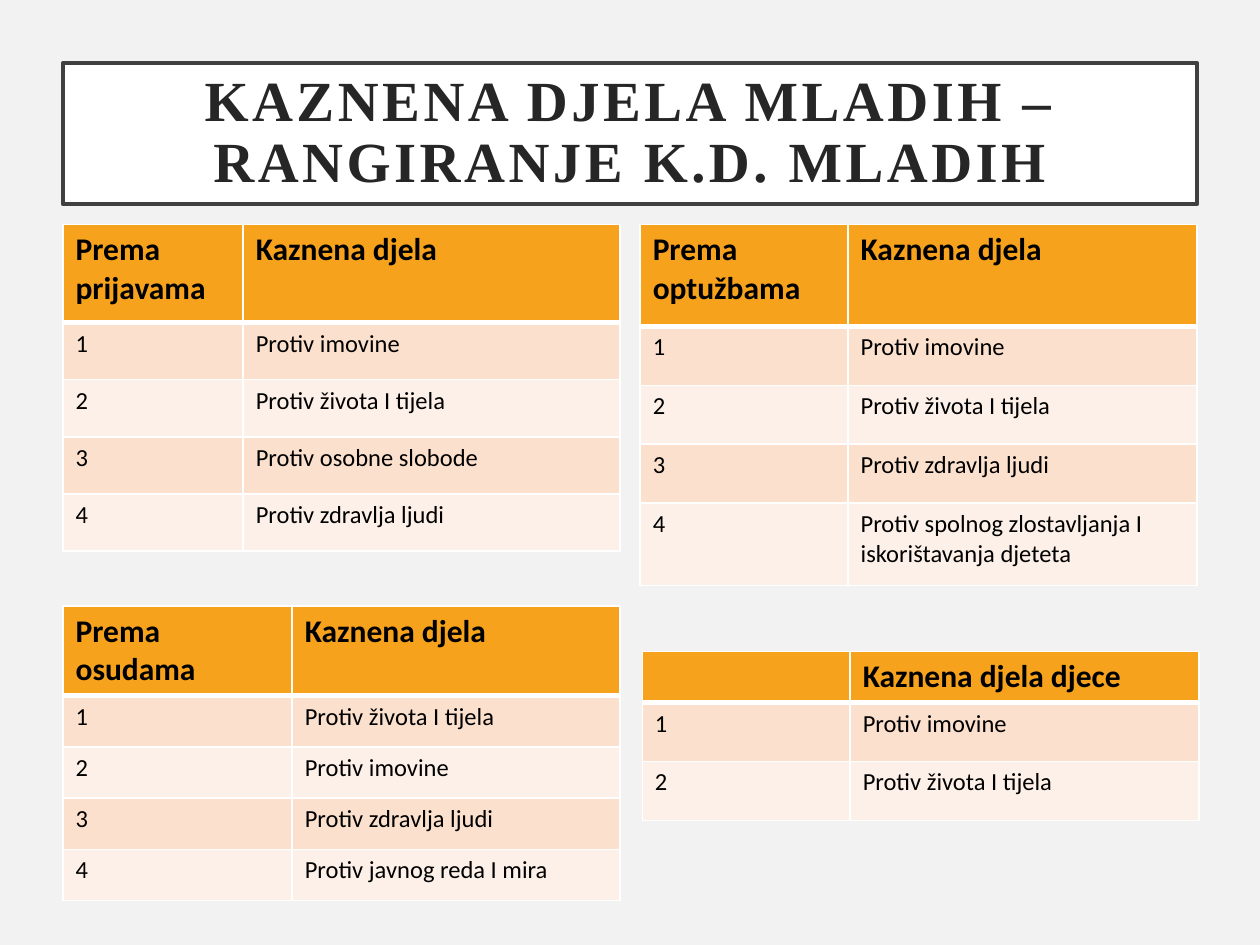
from lxml import etree
from pptx import Presentation
from pptx.dml.color import RGBColor
from pptx.enum.shapes import MSO_SHAPE
from pptx.enum.text import MSO_ANCHOR, PP_ALIGN
from pptx.oxml.ns import qn
from pptx.util import Pt

RECT = MSO_SHAPE.RECTANGLE
MIDDLE = MSO_ANCHOR.MIDDLE
CENTER = PP_ALIGN.CENTER

HEAD = "F6A21D"
BANDS = ["FBE0CD", "FDF0E8"]
WHITE = "FFFFFF"
WIDTH = 318.2

# left, top, first column width, row heights, rows of text
TABLES = [
    (36, 128.2, 103, [56.2] + [32.6] * 4, [
        ("Prema prijavama", "Kaznena djela"),
        ("1", "Protiv imovine"),
        ("2", "Protiv života I tijela"),
        ("3", "Protiv osobne slobode"),
        ("4", "Protiv zdravlja ljudi")]),
    (365.8, 128.2, 118.8, [58.3] + [33.7] * 3 + [47], [
        ("Prema optužbama", "Kaznena djela"),
        ("1", "Protiv imovine"),
        ("2", "Protiv života I tijela"),
        ("3", "Protiv zdravlja ljudi"),
        ("4", "Protiv spolnog zlostavljanja I iskorištavanja djeteta")]),
    (367, 372.2, 118.8, [28.8] + [33.7] * 2, [
        ("", "Kaznena djela djece"),
        ("1", "Protiv imovine"),
        ("2", "Protiv života I tijela")]),
    (36, 346.3, 131, [50.4] + [29.3] * 4, [
        ("Prema osudama", "Kaznena djela"),
        ("1", "Protiv života I tijela"),
        ("2", "Protiv imovine"),
        ("3", "Protiv zdravlja ljudi"),
        ("4", "Protiv javnog reda I mira")]),
]


def color(code):
    return RGBColor.from_string(code)


def paint(fill, code):
    fill.solid()
    fill.fore_color.rgb = color(code)


def style(run, name, size, code, bold):
    font = run.font
    font.name, font.size, font.bold = name, Pt(size), bold
    font.color.rgb = color(code)


def add_title(slide, text):
    box = slide.shapes.add_shape(RECT, Pt(36), Pt(36), Pt(648), Pt(80.6))
    box.shadow.inherit = False
    paint(box.fill, WHITE)
    box.line.color.rgb = color("404040")
    box.line.width = Pt(2.5)
    frame = box.text_frame
    frame.text = text
    frame.word_wrap = True
    frame.vertical_anchor = MIDDLE
    frame.margin_left = frame.margin_right = Pt(14.4)
    frame.margin_top = frame.margin_bottom = Pt(14.4)
    para = frame.paragraphs[0]
    para.alignment = CENTER
    para.line_spacing = 0.9
    run = para.runs[0]
    style(run, "Times New Roman", 32.4, "262626", True)
    run.font._element.set("spc", "200")


def add_edges(cell, top, bottom):
    # Border lines come before the fill in the cell properties
    props = cell._tc.get_or_add_tcPr()
    edges = [("a:lnL", 1), ("a:lnR", 1), ("a:lnT", top), ("a:lnB", bottom)]
    for index, (tag, width) in enumerate(edges):
        line = etree.Element(qn(tag), w=str(Pt(width)))
        fill = etree.SubElement(line, qn("a:solidFill"))
        etree.SubElement(fill, qn("a:srgbClr"), val=WHITE)
        props.insert(index, line)


def add_table(slide, left, top, first, heights, rows):
    frame = slide.shapes.add_table(len(rows), 2, Pt(left), Pt(top),
                                   Pt(WIDTH), Pt(sum(heights)))
    table = frame.table
    for col, width in zip(table.columns, (first, WIDTH - first)):
        col.width = Pt(width)
    for r, (height, texts) in enumerate(zip(heights, rows)):
        table.rows[r].height = Pt(height)
        head = r == 0
        for c, text in enumerate(texts):
            cell = table.cell(r, c)
            paint(cell.fill, HEAD if head else BANDS[(r - 1) % 2])
            add_edges(cell, 3 if r == 1 else 1, 3 if head else 1)
            if text:
                cell.text_frame.text = text
                run = cell.text_frame.paragraphs[0].runs[0]
                style(run, "Calibri", 18 if head else 14, "000000", head)


def main():
    deck = Presentation()
    deck.slide_width, deck.slide_height = Pt(720), Pt(540)
    slide = deck.slides.add_slide(deck.slide_layouts[6])
    paint(slide.background.fill, "F2F2F2")
    add_title(slide, "KAZNENA DJELA MLADIH – RANGIRANJE K.D. MLADIH")
    for table in TABLES:
        add_table(slide, *table)
    deck.save("out.pptx")


if __name__ == "__main__":
    main()
